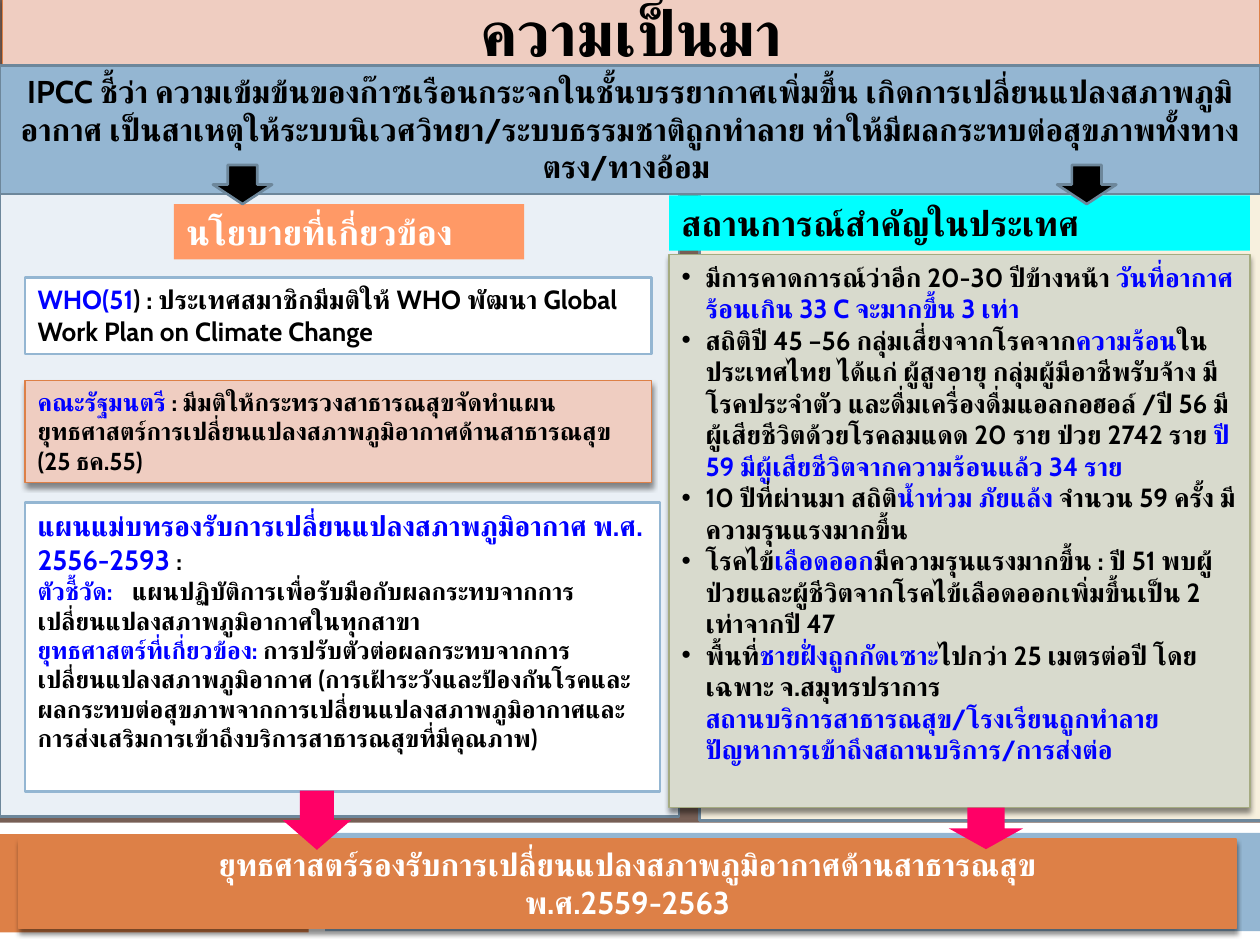
import pptx
import pptx.util
import pptx.dml.color
import pptx.enum.shapes
import pptx.enum.text
import pptx.oxml
import pptx.oxml.ns

Inches, Pt = pptx.util.Inches, pptx.util.Pt
RGBColor = pptx.dml.color.RGBColor
SHAPE = pptx.enum.shapes.MSO_SHAPE
ALIGN = pptx.enum.text.PP_ALIGN
ANCHOR = pptx.enum.text.MSO_ANCHOR
qn = pptx.oxml.ns.qn

WIDTH, HEIGHT = 10, 7.5
FONT = "Cabin"
COLOURS = {
    "brown": "775F55", "white": "FFFFFF", "black": "000000", "blue": "0000FF",
    "orange": "DD8047", "sky": "94B6D2", "slate": "6D879B", "cream": "F7F0DE",
    "ice": "EAF0F6", "peach": "EFCDC1", "salmon": "FF9966", "cyan": "00FFFF",
    "sage": "D8DACD", "olive": "A5AB81", "pink": "FF0066",
}

# Each paragraph is a list of runs: (text, colour) or (text, colour, size).
TITLE = [[("ความเป็นมา", "black")]]
IPCC = [[("IPCC ชี้ว่า ความเข้มข้นของก๊าซเรือนกระจกในชั้นบรรยากาศเพิ่มขึ้น เกิดการเปลี่ยนแปลงสภาพภูมิอากาศ "
          "เป็นสาเหตุให้ระบบนิเวศวิทยา/ระบบธรรมชาติถูกทำลาย ทำให้มีผลกระทบต่อสุขภาพทั้งทางตรง/ทางอ้อม ", "black")]]
POLICY_HEADING = [[("นโยบายที่เกี่ยวข้อง", "white")]]
SITUATION_HEADING = [[("สถานการณ์สำคัญในประเทศ", "black")]]
WHO = [[("WHO(51", "blue"),
        (") : ประเทศสมาชิกมีมติให้ WHO พัฒนา Global Work Plan on Climate Change", "black")]]
CABINET = [[("คณะรัฐมนตรี ", "blue"),
            (": มีมติให้กระทรวงสาธารณสุขจัดทำแผนยุทธศาสตร์การเปลี่ยนแปลงสภาพภูมิอากาศด้านสาธารณสุข (25 ธค.55)",
             "black")]]
MASTER_PLAN = [
    [("แผนแม่บทรองรับการเปลี่ยนแปลงสภาพภูมิอากาศ พ.ศ. 2556-2593 ", "blue", 16), (":", "black")],
    [("ตัวชี้วัด:\t", "blue"),
     ("แผนปฏิบัติการเพื่อรับมือกับผลกระทบจากการเปลี่ยนแปลงสภาพภูมิอากาศในทุกสาขา", "black")],
    [("ยุทธศาสตร์ที่เกี่ยวข้อง: ", "blue"),
     ("การปรับตัวต่อผลกระทบจากการเปลี่ยนแปลงสภาพภูมิอากาศ (การเฝ้าระวังและป้องกันโรคและ"
      "ผลกระทบต่อสุขภาพจากการเปลี่ยนแปลงสภาพภูมิอากาศและการส่งเสริมการเข้าถึงบริการสาธารณสุขที่มีคุณภาพ)",
      "black")],
]
SITUATION = [
    [("มีการคาดการณ์ว่าอีก 20-30 ปีข้างหน้า ", "black"),
     ("วันที่อากาศร้อนเกิน 33 C จะมากขึ้น 3 เท่า", "blue")],
    [("สถิติปี 45 –56 กลุ่มเสี่ยงจากโรคจาก", "black"), ("ความร้อน", "blue"),
     ("ในประเทศไทย ได้แก่ ผู้สูงอายุ กลุ่มผู้มีอาชีพรับจ้าง มีโรคประจำตัว และดื่มเครื่องดื่มแอลกอฮอล์ "
      "/ปี 56 มีผู้เสียชีวิตด้วยโรคลมแดด 20 ราย ป่วย 2742 ราย ", "black"),
     ("ปี 59 มีผู้เสียชีวิตจากความร้อนแล้ว 34 ราย", "blue")],
    [("10 ปีที่ผ่านมา สถิติ", "black"), ("น้ำท่วม ภัยแล้ง ", "blue"),
     ("จำนวน 59 ครั้ง มีความรุนแรงมากขึ้น", "black")],
    [("โรคไข้", "black"), ("เลือดออก", "blue"),
     ("มีความรุนแรงมากขึ้น : ปี 51 พบผู้ป่วยและผู้ชีวิตจากโรคไข้เลือดออกเพิ่มขึ้นเป็น 2 เท่าจากปี 47", "black")],
    [("พื้นที่", "black"), ("ชายฝั่งถูกกัดเซาะ", "blue"),
     ("ไปกว่า 25 เมตรต่อปี โดยเฉพาะ จ.สมุทรปราการ\n", "black"),
     ("สถานบริการสาธารณสุข/โรงเรียนถูกทำลาย\nปัญหาการเข้าถึงสถานบริการ/การส่งต่อ", "blue")],
]
STRATEGY = [[("ยุทธศาสตร์รองรับการเปลี่ยนแปลงสภาพภูมิอากาศด้านสาธารณสุข", "white")],
            [("พ.ศ.2559-2563", "white")]]

# Column edges and widths shared by the boxes.
LEFT, LEFT_WIDTH = 0.2, 4.97
RIGHT, RIGHT_WIDTH = 5.31, 4.61

BACKDROP = [  # frame, fill, line
    ((0, 6.53, WIDTH, 0.97), "white", None),
    ((-0.01, 6.62, 2.46, 0.78), "orange", None),
    ((2.58, 6.61, 7.42, 0.78), "sky", None),
    ((5.55, 1.47, 4.46, 5.04), "cream", "slate"),
    ((0, 1.15, 5.39, 5.33), "ice", "slate"),
]
POLICY_BOXES = [  # frame, paragraphs, size, look
    ((LEFT, 2.2, LEFT_WIDTH, 0.61), WHO, 15, dict(fill="white", line="sky")),
    ((LEFT, 3.02, LEFT_WIDTH, 0.81), CABINET, 14,
     dict(fill="peach", line="orange", line_width=0.79, shadow=True)),
    ((1.38, 1.62, 2.78, 0.44), POLICY_HEADING, 20, dict(fill="salmon")),
    ((RIGHT, 1.55, RIGHT_WIDTH, 0.44), SITUATION_HEADING, 20, dict(fill="cyan")),
    ((LEFT, 3.99, 5.04, 2.29), MASTER_PLAN, 14, dict(fill="white", line="sky")),
]
PINK_ARROWS = [(2.28, 6.24, 0.47, 0.54), (7.66, 6.28, 0.33, 0.59)]
BLACK_ARROWS = [(left, 1.31, 0.47, 0.31) for left in (1.69, 8.39)]


def rgb(name):
    return RGBColor.from_string(COLOURS[name])


def style(shape, frame, fill, line=None, line_width=1.5, shadow=False):
    """Place a shape and give it its fill, outline and optional soft shadow."""
    shape.left, shape.top, shape.width, shape.height = map(Inches, frame)
    shape.fill.solid()
    shape.fill.fore_color.rgb = rgb(fill)
    if line:
        shape.line.color.rgb = rgb(line)
        shape.line.width = Pt(line_width)
    else:
        shape.line.fill.background()
    shape.shadow.inherit = False
    if shadow:
        shape.element.spPr.find(qn("a:effectLst")).append(pptx.oxml.parse_xml(
            f'<a:outerShdw {pptx.oxml.ns.nsdecls("a")} blurRad="{Pt(3)}" dist="{Pt(2.4)}" '
            'dir="5400000" rotWithShape="0"><a:srgbClr val="000000"><a:alpha val="45000"/>'
            '</a:srgbClr></a:outerShdw>'))
    return shape


def write(shape, paragraphs, size, align=ALIGN.LEFT, anchor=ANCHOR.TOP, bullet=False, tab=None):
    frame = shape.text_frame
    frame.word_wrap = True
    frame.auto_size = pptx.enum.text.MSO_AUTO_SIZE.NONE
    frame.vertical_anchor = anchor
    for index, runs in enumerate(paragraphs):
        paragraph = frame.add_paragraph() if index else frame.paragraphs[0]
        paragraph.alignment = align
        paragraph.space_before = Pt(0)
        properties = paragraph._p.get_or_add_pPr()
        if bullet:
            properties.set("marL", str(Inches(0.29)))
            properties.set("indent", str(-Inches(0.29)))
            properties.set("marL", str(Inches(0.19)))
            properties.set("indent", str(-Inches(0.19)))
            properties.append(properties.makeelement(qn("a:buChar"), {"char": "•"}))
        if tab:
            tabs = properties.makeelement(qn("a:tabLst"), {})
            tabs.append(tabs.makeelement(qn("a:tab"), {"pos": str(Inches(tab)), "algn": "l"}))
            properties.append(tabs)
        for text, colour, *own_size in runs:
            for line_index, line in enumerate(text.split("\n")):
                if line_index:
                    paragraph.add_line_break()
                if not line:
                    continue
                run = paragraph.add_run()
                run.text = line
                run.font.name = FONT
                run.font.size = Pt(own_size[0] if own_size else size)
                run.font.bold = True
                run.font.color.rgb = rgb(colour)
                run_properties = run.font._element
                run_properties.append(run_properties.makeelement(qn("a:cs"), {"typeface": FONT}))


def main():
    presentation = pptx.Presentation()
    presentation.slide_width, presentation.slide_height = Inches(WIDTH), Inches(HEIGHT)
    slide = presentation.slides.add_slide(presentation.slide_layouts[1])
    slide.background.fill.solid()
    slide.background.fill.fore_color.rgb = rgb("brown")
    shapes = slide.shapes
    title, body = slide.placeholders

    def add(kind, frame, **look):
        return style(shapes.add_shape(kind, *map(Inches, frame)), frame, **look)

    def bring_forward(placeholder):
        shapes.element.append(placeholder.element)

    for frame, fill, line in BACKDROP:
        add(SHAPE.RECTANGLE, frame, fill=fill, line=line)

    bring_forward(title)
    style(title, (0.02, -0.02, 9.98, 0.54), "peach", "orange", 0.79, shadow=True)
    write(title, TITLE, 36, align=ALIGN.CENTER, anchor=ANCHOR.MIDDLE)

    for frame, paragraphs, size, look in POLICY_BOXES:
        box = add(SHAPE.RECTANGLE, frame, **look)
        write(box, paragraphs, size, tab=0.75 if paragraphs is MASTER_PLAN else None)

    strategy = add(SHAPE.RECTANGLE, (0.15, 6.66, 9.66, 0.71), fill="orange", line="orange",
                   line_width=0.79, shadow=True)
    write(strategy, STRATEGY, 18, align=ALIGN.CENTER)

    bring_forward(body)
    style(body, (RIGHT, 2.02, RIGHT_WIDTH, 4.39), "sage", "olive", 0.79, shadow=True)
    write(body, SITUATION, 15, bullet=True)

    for frame in PINK_ARROWS:
        add(SHAPE.RIGHT_ARROW, frame, fill="pink").rotation = 90

    ipcc = add(SHAPE.RECTANGLE, (0, 0.52, WIDTH, 1.02), fill="sky", line="slate")
    write(ipcc, IPCC, 18, align=ALIGN.CENTER)
    for frame in BLACK_ARROWS:
        add(SHAPE.DOWN_ARROW, frame, fill="black", line="slate")

    presentation.save("out.pptx")


if __name__ == "__main__":
    main()
